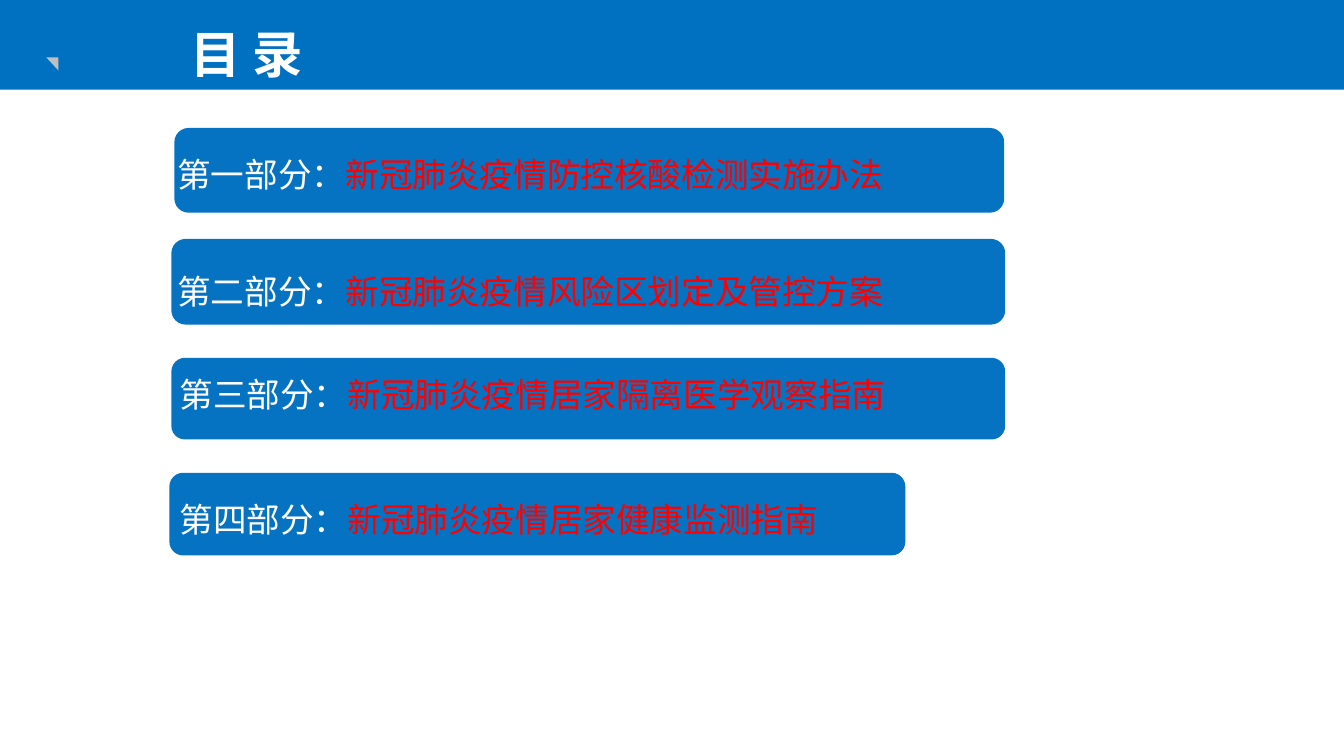
"""Build the contents slide with its four parts."""
import pptx
import pptx.dml.color
import pptx.enum.shapes
import pptx.enum.text
import pptx.oxml.ns
import pptx.util
from lxml import etree

Inches = pptx.util.Inches
Shapes = pptx.enum.shapes.MSO_SHAPE

THEME = {
    "font": "Noto Sans CJK SC",
    "band": "0070C0",
    "panel": "0573C1",
    "marker": "BFBFBF",
    "light": "FFFFFF",
    "accent": "FF0000",
    "title_size": 36,
    "part_size": 24,
    "line_spacing": 1.3,
}

SLIDE_SIZE = (13.33, 7.5)
BAND_HEIGHT = 0.89
TITLE = "目 录"
TITLE_BOX = (1.77, 0, 1.35, BAND_HEIGHT)
MARKER_BOX = (0.46, 0.57, 0.12, 0.13)
TEXT_HEIGHT = 0.47

PARTS = [
    {"label": "第一部分：", "topic": "新冠肺炎疫情防控核酸检测实施办法",
     "panel": (1.73, 1.27, 8.23, 0.84), "text": (1.76, 1.41, 8.03, TEXT_HEIGHT)},
    {"label": "第二部分：", "topic": "新冠肺炎疫情风险区划定及管控方案",
     "panel": (1.7, 2.37, 8.27, 0.85), "text": (1.76, 2.57, 8.03, TEXT_HEIGHT)},
    {"label": "第三部分：", "topic": "新冠肺炎疫情居家隔离医学观察指南",
     "panel": (1.7, 3.55, 8.27, 0.81), "text": (1.78, 3.59, 8.08, TEXT_HEIGHT)},
    {"label": "第四部分：", "topic": "新冠肺炎疫情居家健康监测指南",
     "panel": (1.68, 4.69, 7.3, 0.82), "text": (1.78, 4.83, 7.91, TEXT_HEIGHT)},
]


def theme_color(name):
    return pptx.dml.color.RGBColor.from_string(THEME[name])


def add_filled_shape(slide, kind, box, color):
    shape = slide.shapes.add_shape(kind, *map(Inches, box))
    shape.shadow.inherit = False
    shape.fill.solid()
    shape.fill.fore_color.rgb = theme_color(color)
    shape.line.fill.background()
    return shape


def add_text(slide, box, runs, size, bold=False, wrap=True):
    frame = slide.shapes.add_textbox(*map(Inches, box)).text_frame
    frame.word_wrap = wrap
    frame.auto_size = pptx.enum.text.MSO_AUTO_SIZE.SHAPE_TO_FIT_TEXT
    paragraph = frame.paragraphs[0]
    paragraph.line_spacing = THEME["line_spacing"]
    paragraph.font.size = pptx.util.Pt(THEME[size])
    paragraph.font.bold = bold
    paragraph.font.name = THEME["font"]
    for text, color in runs:
        run = paragraph.add_run()
        run.text = text
        run.font.color.rgb = theme_color(color)
        east_asian = etree.SubElement(run.font._element, pptx.oxml.ns.qn("a:ea"))
        east_asian.set("typeface", THEME["font"])
    return frame


def add_header(slide):
    add_filled_shape(slide, Shapes.RECTANGLE, (0, 0, SLIDE_SIZE[0], BAND_HEIGHT), "band")
    marker = add_filled_shape(slide, Shapes.RIGHT_TRIANGLE, MARKER_BOX, "marker")
    marker.rotation = 180
    title = add_text(slide, TITLE_BOX, [(TITLE, "light")], "title_size", bold=True, wrap=False)
    title.paragraphs[0].alignment = pptx.enum.text.PP_ALIGN.CENTER


def add_part(slide, part):
    add_filled_shape(slide, Shapes.ROUNDED_RECTANGLE, part["panel"], "panel")
    runs = [(part["label"], "light"), (part["topic"], "accent")]
    frame = add_text(slide, part["text"], runs, "part_size")
    frame.margin_left = frame.margin_top = frame.margin_right = frame.margin_bottom = 0


def main():
    presentation = pptx.Presentation()
    presentation.slide_width, presentation.slide_height = map(Inches, SLIDE_SIZE)
    slide = presentation.slides.add_slide(presentation.slide_layouts[6])
    add_header(slide)
    for part in PARTS:
        add_part(slide, part)
    presentation.save("out.pptx")


if __name__ == "__main__":
    main()
